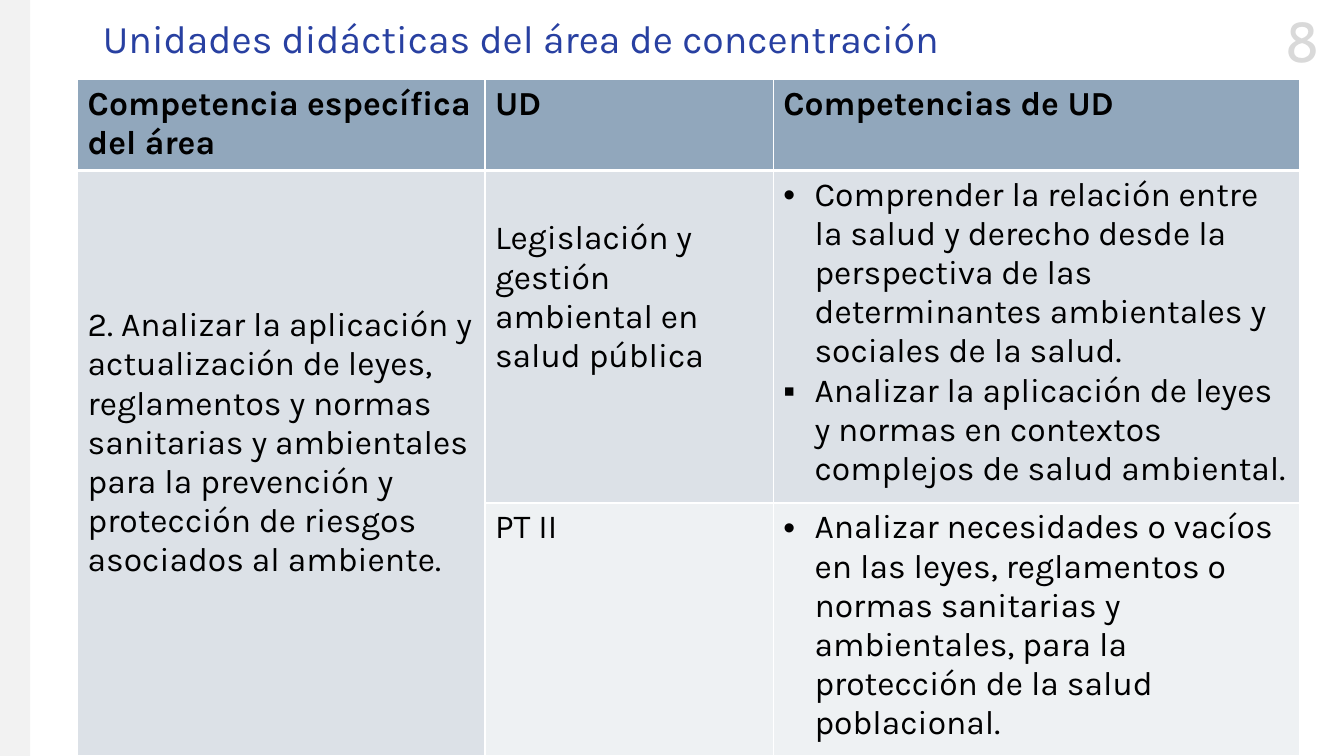
import pptx
import pptx.util
import pptx.dml.color
import pptx.enum.shapes
import pptx.enum.text
import pptx.oxml.ns
import lxml.etree

COLORS = {
    "title": "2840A1", "number": "D9D9D9", "band": "F2F2F2", "text": "000000",
    "header": "91A7BC", "first": "DCE1E7", "second": "EEF1F3", "border": "FFFFFF",
}
Inches = pptx.util.Inches
ALIGN = pptx.enum.text.PP_ALIGN
ANCHOR = pptx.enum.text.MSO_ANCHOR
TITLE_BOX = (0.92, 0.03, 11.5, 0.75)
NUMBER_BOX = (12.54, 0.02, 0.75, 0.77)
BAND_BOX = (0, 0, 0.3, 7.5)
TABLE_BOX = (0.77, 0.79, 12.12, 6.51)
COLUMN_SHARES = (4.04, 2.86, 5.22)
ROW_SHARES = (0.88, 3.2, 2.43)
LINE = 0.39
HANGING = 0.31
BODY = {"size": pptx.util.Pt(24), "name": "Karla", "bold": False}

HEADERS = ("Competencia específica del área", "UD", "Competencias de UD")
AREA = ("2. Analizar la aplicación y actualización de leyes, reglamentos y normas "
        "sanitarias y ambientales para la prevención y protección de riesgos "
        "asociados al ambiente.")
UNITS = (
    ("Legislación y gestión ambiental en salud pública", (
        ("•", "Comprender la relación entre la salud y derecho desde la perspectiva de "
              "las determinantes ambientales y sociales de la salud."),
        ("▪", "Analizar la aplicación de leyes y normas en contextos complejos de "
              "salud ambiental."))),
    ("PT II", (
        ("•", "Analizar necesidades o vacíos en las leyes, reglamentos o normas "
              "sanitarias y ambientales, para la protección de la salud poblacional."),)),
)


def color(name):
    return pptx.dml.color.RGBColor.from_string(COLORS[name])


def add_element(parent, tag, **values):
    element = lxml.etree.SubElement(parent, pptx.oxml.ns.qn(tag))
    for key, value in values.items():
        element.set(key, str(value))
    return element


def set_values(target, values):
    for key, value in values.items():
        setattr(target, key, value)


def write(para, text, tint, values):
    para.text = text
    set_values(para.font, values)
    para.font.color.rgb = color(tint)


def add_bullet(para, mark):
    indent = Inches(HANGING)
    properties = para._p.get_or_add_pPr()
    properties.set("marL", str(indent))
    properties.set("indent", str(-indent))
    add_element(properties, "a:buFont", typeface="Arial")
    add_element(properties, "a:buChar", char=mark)


def style_cell(cell, fill, bottom=1):
    properties = cell._tc.get_or_add_tcPr()
    for side, width in (("L", 1), ("R", 1), ("T", 1), ("B", bottom)):
        line = add_element(properties, "a:ln" + side, w=pptx.util.Pt(width))
        add_element(add_element(line, "a:solidFill"), "a:srgbClr", val=COLORS["border"])
    cell.fill.solid()
    cell.fill.fore_color.rgb = color(fill)


def fill_cell(cell, items, values=BODY):
    for index, (mark, text) in enumerate(items):
        para = cell.text_frame.add_paragraph() if index else cell.text_frame.paragraphs[0]
        if mark:
            add_bullet(para, mark)
        write(para, text, "text", values)


def add_band(page, box):
    band = page.shapes.add_shape(pptx.enum.shapes.MSO_SHAPE.RECTANGLE, *map(Inches, box))
    band.shadow.inherit = False
    band.fill.solid()
    band.fill.fore_color.rgb = color("band")
    band.line.fill.background()


def add_number(page, box):
    frame = page.shapes.add_textbox(*map(Inches, box)).text_frame
    frame.word_wrap = False
    para = frame.paragraphs[0]
    para.alignment = ALIGN.CENTER
    write(para, "8", "number", {"size": pptx.util.Pt(40), "name": "Cabin"})


def place_title(page, box):
    title = page.shapes.title
    set_values(title, dict(zip(("left", "top", "width", "height"), map(Inches, box))))
    title.text_frame.vertical_anchor = ANCHOR.MIDDLE
    para = title.text_frame.paragraphs[0]
    set_values(para, {"alignment": ALIGN.LEFT, "line_spacing": 0.9})
    write(para, "Unidades didácticas del área de concentración", "title",
          {"size": pptx.util.Pt(28), "name": "Karla"})


def add_units(page, box):
    table = page.shapes.add_table(
        len(ROW_SHARES), len(COLUMN_SHARES), *map(Inches, box)).table
    for column, share in zip(table.columns, COLUMN_SHARES):
        column.width = Inches(box[2] * share / sum(COLUMN_SHARES))
    for row, share in zip(table.rows, ROW_SHARES):
        row.height = Inches(box[3] * share / sum(ROW_SHARES))
    for row, (fill, bottom) in enumerate((("header", 3), ("first", 1), ("second", 1))):
        for column in range(len(COLUMN_SHARES)):
            shade = "first" if row and not column else fill
            style_cell(table.cell(row, column), shade, bottom)
    for column, text in enumerate(HEADERS):
        fill_cell(table.cell(0, column), [(None, text)], {**BODY, "bold": True})
    table.cell(1, 0).merge(table.cell(2, 0))
    fill_cell(table.cell(1, 0), [(None, AREA)])
    for row, (unit, skills) in enumerate(UNITS, 1):
        fill_cell(table.cell(row, 1), [(None, unit)])
        fill_cell(table.cell(row, 2), skills)
    for column, lines in ((0, 1), (1, 2)):
        set_values(table.cell(1, column), {
            "vertical_anchor": ANCHOR.MIDDLE,
            "margin_bottom": Inches(0.05 + lines * LINE)})


def main():
    deck = pptx.Presentation()
    set_values(deck, {"slide_width": Inches(13.33), "slide_height": Inches(7.5)})
    page = deck.slides.add_slide(deck.slide_layouts[5])
    add_number(page, NUMBER_BOX)
    add_band(page, BAND_BOX)
    place_title(page, TITLE_BOX)
    add_units(page, TABLE_BOX)
    deck.save("out.pptx")


if __name__ == "__main__":
    main()
